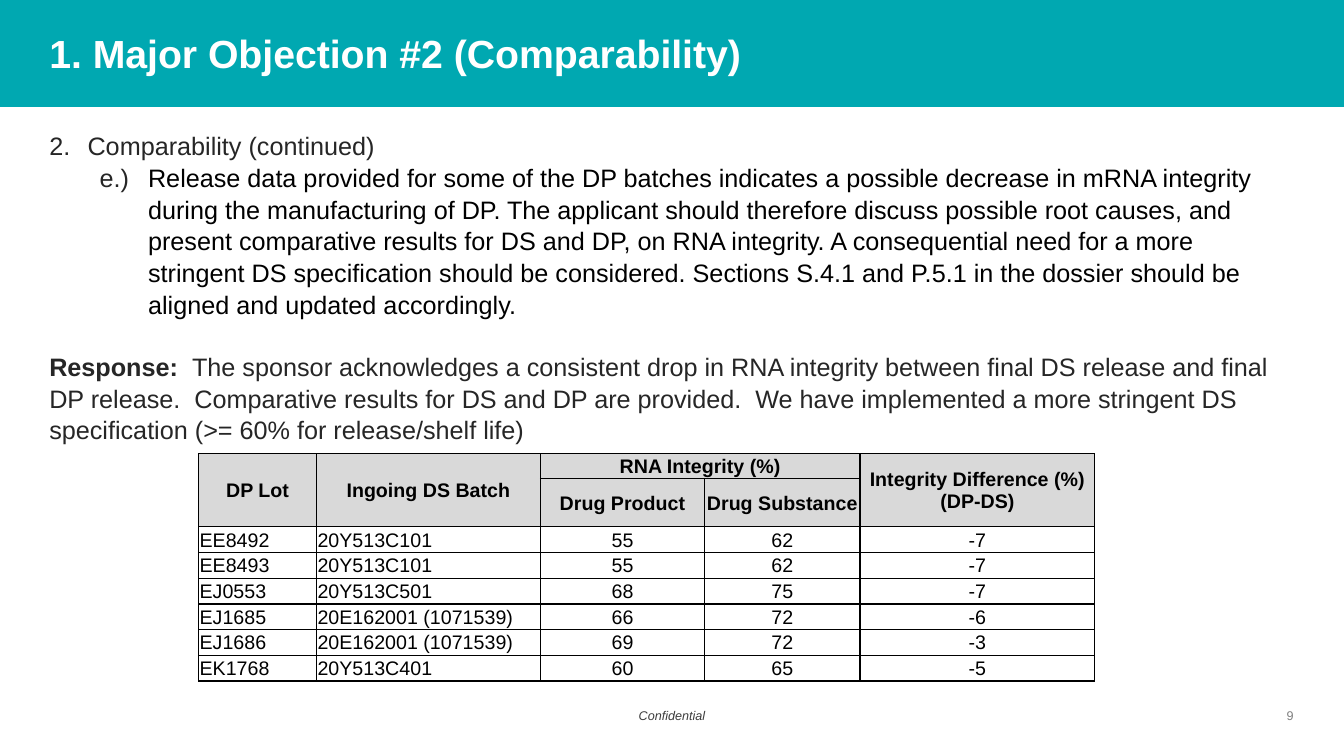
from lxml.etree import SubElement
from pptx import Presentation
from pptx.dml.color import RGBColor
from pptx.enum.shapes import MSO_SHAPE
from pptx.enum.text import MSO_ANCHOR, PP_ALIGN
from pptx.oxml.ns import qn
from pptx.util import Inches, Pt

COLORS = {"teal": "00A8B1", "white": "FFFFFF", "black": "000000", "body": "262626",
          "footer": "3C3C3C", "number": "808080", "header": "D9D9D9"}

REQUEST = ("Release data provided for some of the DP batches indicates a possible decrease in "
           "mRNA integrity during the manufacturing of DP. The applicant should therefore discuss "
           "possible root causes, and present comparative results for DS and DP, on RNA integrity. "
           "A consequential need for a more stringent DS specification should be considered. "
           "Sections S.4.1 and P.5.1 in the dossier should be aligned and updated accordingly.")
RESPONSE = ("The sponsor acknowledges a consistent drop in RNA integrity between final DS release "
            "and final DP release.  Comparative results for DS and DP are provided.  We have "
            "implemented a more stringent DS specification (>= 60% for release/shelf life)")

COL_WIDTHS = [1.17, 2.22, 1.63, 1.54, 2.33]
ROW_HEIGHTS = [0.25, 0.45] + [0.255] * 6
# (row, column, last row, last column, text)
HEADERS = [
    (0, 0, 1, 0, "DP Lot"),
    (0, 1, 1, 1, "Ingoing DS Batch"),
    (0, 2, 0, 3, "RNA Integrity (%)"),
    (0, 4, 1, 4, "Integrity Difference (%)\n(DP-DS)"),
    (1, 2, 1, 2, "Drug Product"),
    (1, 3, 1, 3, "Drug Substance"),
]
BATCHES = [
    ("EE8492", "20Y513C101", 55, 62),
    ("EE8493", "20Y513C101", 55, 62),
    ("EJ0553", "20Y513C501", 68, 75),
    ("EJ1685", "20E162001 (1071539)", 66, 72),
    ("EJ1686", "20E162001 (1071539)", 69, 72),
    ("EK1768", "20Y513C401", 60, 65),
]


def rgb(name):
    return RGBColor.from_string(COLORS[name])


def add_text(p, text, size=18, color="body", bold=False, italic=False, align=None):
    r = p.add_run()
    r.text = text
    r.font.name = "Arial"
    r.font.size = Pt(size)
    r.font.color.rgb = rgb(color)
    r.font.bold = bold
    r.font.italic = italic
    if align is not None:
        p.alignment = align


def add_box(s, left, top, width, height, inset=None, anchor=MSO_ANCHOR.TOP):
    tf = s.shapes.add_textbox(Inches(left), Inches(top), Inches(width), Inches(height)).text_frame
    tf.word_wrap = True
    tf.vertical_anchor = anchor
    if inset is not None:
        tf.margin_left = tf.margin_right = tf.margin_top = tf.margin_bottom = Inches(inset)
    return tf


def set_indent(p, left, first):
    pPr = p._p.get_or_add_pPr()
    pPr.set("marL", str(Inches(left)))
    pPr.set("indent", str(Inches(first)))
    return pPr


def add_title(s):
    band = s.shapes.add_shape(MSO_SHAPE.RECTANGLE, 0, 0, Inches(13.33), Inches(1.06))
    band.shadow.inherit = False
    band.fill.solid()
    band.fill.fore_color.rgb = rgb("teal")
    band.line.fill.background()
    tf = add_box(s, 0.39, 0.13, 12.52, 0.79, anchor=MSO_ANCHOR.MIDDLE)
    add_text(tf.paragraphs[0], "1. Major Objection #2 (Comparability)",
             size=28, color="white", bold=True)


def add_body(s):
    tf = add_box(s, 0.39, 1.23, 12.52, 3.43)
    topic, request, response = tf.paragraphs[0], tf.add_paragraph(), tf.add_paragraph()

    pPr = set_indent(topic, 0.38, -0.38)
    SubElement(pPr, qn("a:buFont"), typeface="+mj-lt")
    SubElement(pPr, qn("a:buAutoNum"), type="arabicPeriod", startAt="2")
    add_text(topic, "Comparability (continued)")

    request.level = 1
    set_indent(request, 0.98, -0.48)
    add_text(request, "e.)\t")
    add_text(request, REQUEST, color="black")

    response.space_before = Pt(21.6)
    add_text(response, "Response:  ", bold=True)
    add_text(response, RESPONSE)

    for p in tf.paragraphs:
        p.line_spacing = 1.05


def add_borders(cell):
    tcPr = cell._tc.get_or_add_tcPr()
    for side in ("lnL", "lnR", "lnT", "lnB"):
        ln = SubElement(tcPr, qn(f"a:{side}"), w=str(Pt(1)))
        fill = SubElement(ln, qn("a:solidFill"))
        SubElement(fill, qn("a:srgbClr"), val=COLORS["black"])


def fill_cell(cell, text, bold=False, align=PP_ALIGN.CENTER):
    cell.vertical_anchor = MSO_ANCHOR.MIDDLE
    cell.margin_left = cell.margin_right = cell.margin_top = Inches(0.01)
    cell.margin_bottom = 0
    tf = cell.text_frame
    for i, line in enumerate(text.split("\n")):
        p = tf.add_paragraph() if i else tf.paragraphs[0]
        add_text(p, line, size=14, color="black", bold=bold, align=align)


def add_integrity_table(s):
    frame = s.shapes.add_table(len(ROW_HEIGHTS), len(COL_WIDTHS), Inches(1.97), Inches(4.5),
                               Inches(sum(COL_WIDTHS)), Inches(sum(ROW_HEIGHTS)))
    table = frame.table
    table.horz_banding = False
    for column, width in zip(table.columns, COL_WIDTHS):
        column.width = Inches(width)
    for i, (row, height) in enumerate(zip(table.rows, ROW_HEIGHTS)):
        row.height = Inches(height)
        for cell in row.cells:
            add_borders(cell)
            if i < 2:
                cell.fill.solid()
                cell.fill.fore_color.rgb = rgb("header")
            else:
                cell.fill.background()

    # Header cells, merged where they span
    for row, col, last_row, last_col, text in HEADERS:
        cell = table.cell(row, col)
        if (row, col) != (last_row, last_col):
            cell.merge(table.cell(last_row, last_col))
        fill_cell(cell, text, bold=True)

    # Batch rows, with the difference worked out
    for row, (lot, batch, product, substance) in enumerate(BATCHES, start=2):
        for col, value in enumerate((lot, batch, product, substance, product - substance)):
            align = PP_ALIGN.LEFT if col < 2 else PP_ALIGN.CENTER
            fill_cell(table.cell(row, col), str(value), align=align)


def add_footer(s):
    tf = add_box(s, 5.22, 7.02, 2.89, 0.15, inset=0)
    add_text(tf.paragraphs[0], "Confidential", size=9, color="footer", italic=True,
             align=PP_ALIGN.CENTER)
    tf = add_box(s, 9.94, 7.02, 2.89, 0.15, inset=0)
    add_text(tf.paragraphs[0], "9", size=9, color="number", align=PP_ALIGN.RIGHT)


def main():
    prs = Presentation()
    prs.slide_width, prs.slide_height = Inches(13.33), Inches(7.5)
    s = prs.slides.add_slide(prs.slide_layouts[6])
    add_title(s)
    add_body(s)
    add_integrity_table(s)
    add_footer(s)
    prs.save("out.pptx")


if __name__ == "__main__":
    main()
